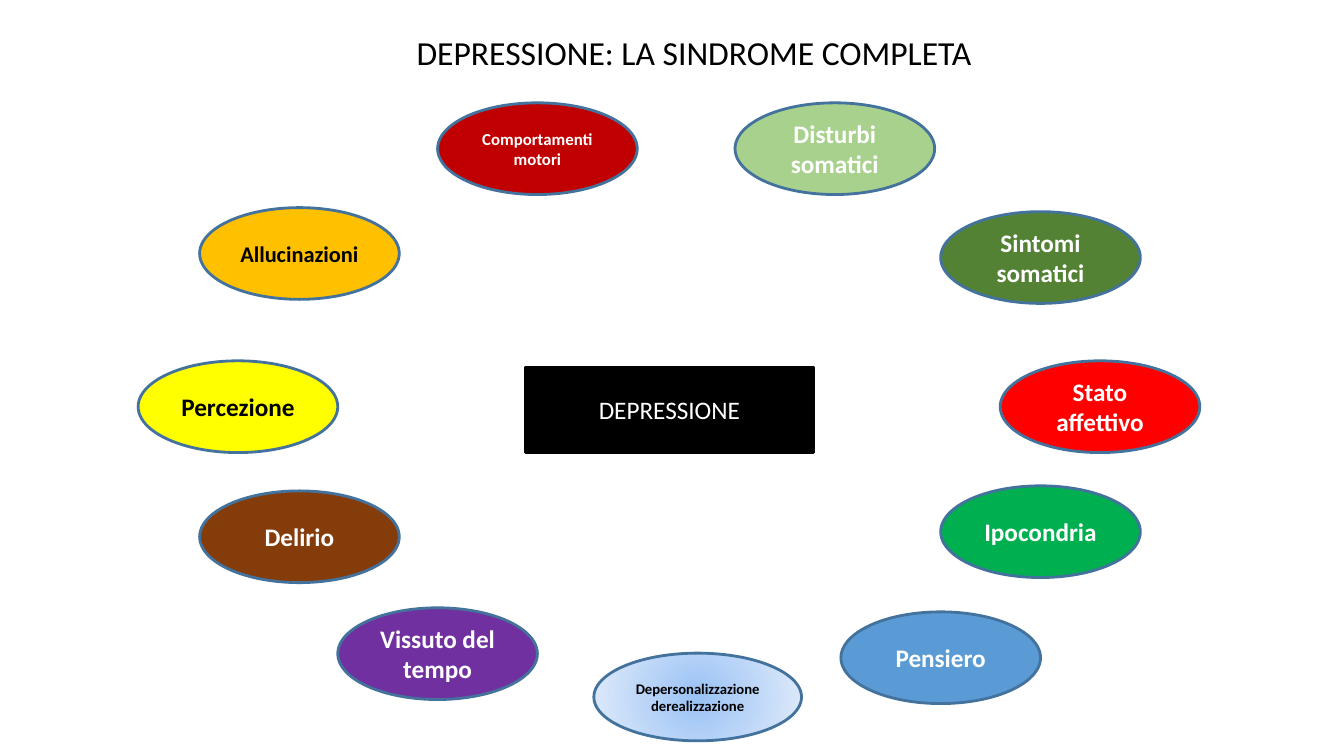
from dataclasses import dataclass

from lxml import etree
from pptx import Presentation
from pptx.dml.color import RGBColor
from pptx.enum.shapes import MSO_SHAPE
from pptx.enum.text import MSO_ANCHOR, MSO_AUTO_SIZE, PP_ALIGN
from pptx.oxml.ns import qn
from pptx.shapes.autoshape import Shape
from pptx.slide import Slide
from pptx.util import Inches, Pt

RECTANGLE = MSO_SHAPE.RECTANGLE
ELLIPSE = MSO_SHAPE.OVAL
CENTER = PP_ALIGN.CENTER
MIDDLE = MSO_ANCHOR.MIDDLE
BOTTOM = MSO_ANCHOR.BOTTOM
NO_AUTOFIT = MSO_AUTO_SIZE.NONE

FONT = "Calibri"
TITLE_ONLY_LAYOUT = 5
BLACK = RGBColor(0x00, 0x00, 0x00)
WHITE = RGBColor(0xFF, 0xFF, 0xFF)
OUTLINE = RGBColor(0x43, 0x72, 0x9D)
RED = RGBColor(0xFF, 0x00, 0x00)
GREEN = RGBColor(0x00, 0xB0, 0x50)
BLUE = RGBColor(0x5B, 0x9B, 0xD5)
PURPLE = RGBColor(0x70, 0x30, 0xA0)
BROWN = RGBColor(0x84, 0x3C, 0x0B)
YELLOW = RGBColor(0xFF, 0xFF, 0x00)
AMBER = RGBColor(0xFF, 0xC0, 0x00)
DARK_RED = RGBColor(0xC0, 0x00, 0x00)
DARK_GREEN = RGBColor(0x54, 0x82, 0x35)
LIGHT_GREEN = RGBColor(0xA9, 0xD1, 0x8E)
GLOW_CENTER = RGBColor(0x9A, 0xC2, 0xF5)
GLOW_EDGE = RGBColor(0xE0, 0xEB, 0xFA)


@dataclass(frozen=True)
class Node:
    text: str
    left: float
    top: float
    fill: RGBColor
    color: RGBColor = WHITE
    size: float = 18
    width: float = 1.98
    height: float = 0.91
    bold: bool = True
    outline: RGBColor = OUTLINE
    kind: MSO_SHAPE = ELLIPSE


CORE = Node("DEPRESSIONE", 5.21, 3.64, BLACK, width=2.86, height=0.85,
            bold=False, outline=BLACK, kind=RECTANGLE)
DEPERSONALIZATION = Node("Depersonalizzazione\nderealizzazione", 5.89, 6.48,
                         GLOW_CENTER, BLACK, 10.5, width=2.06, height=0.87)
SYMPTOMS = [
    Node("Stato affettivo", 9.92, 3.58, RED),
    Node("Ipocondria", 9.33, 4.82, GREEN),
    Node("Pensiero", 8.34, 6.07, BLUE),
    Node("Vissuto del tempo", 3.35, 6.03, PURPLE),
    Node("Delirio", 1.98, 4.87, BROWN),
    Node("Percezione", 1.37, 3.58, YELLOW, BLACK),
    Node("Allucinazioni", 1.98, 2.06, AMBER, BLACK, 16),
    Node("Comportamenti motori", 4.34, 1.02, DARK_RED, size=12),
    Node("Sintomi somatici", 9.33, 2.10, DARK_GREEN),
    Node("Disturbi somatici", 7.29, 1.02, LIGHT_GREEN),
]


def write_text(box: Shape, text: str, size: float, color: RGBColor,
               bold: bool, anchor: MSO_ANCHOR) -> None:
    frame = box.text_frame
    frame.text = text
    frame.word_wrap = True
    frame.vertical_anchor = anchor
    for para in frame.paragraphs:
        para.alignment = CENTER
        for span in para.runs:
            span.font.name = FONT
            span.font.size = Pt(size)
            span.font.bold = bold
            span.font.color.rgb = color


def add_title(page: Slide) -> None:
    title = page.shapes.title
    title.left, title.top = Inches(1.43), Inches(0.23)
    title.width, title.height = Inches(10.91), Inches(0.54)
    write_text(title, "DEPRESSIONE: LA SINDROME COMPLETA", 24, BLACK, False, BOTTOM)
    title.text_frame.auto_size = NO_AUTOFIT
    title.text_frame.paragraphs[0].line_spacing = 0.9


def add_node(page: Slide, node: Node) -> Shape:
    box = page.shapes.add_shape(node.kind, Inches(node.left), Inches(node.top),
                                Inches(node.width), Inches(node.height))
    box.shadow.inherit = False
    box.fill.solid()
    box.fill.fore_color.rgb = node.fill
    box.line.color.rgb = node.outline
    box.line.width = Pt(2)
    write_text(box, node.text, node.size, node.color, node.bold, MIDDLE)
    return box


def apply_glow(box: Shape) -> None:
    box.fill.gradient()
    for stop, color in zip(box.fill.gradient_stops, (GLOW_CENTER, GLOW_EDGE)):
        stop.color.rgb = color
    gradient = box._element.spPr.find(qn("a:gradFill"))
    gradient.remove(gradient.find(qn("a:lin")))
    circle = etree.SubElement(gradient, qn("a:path"), path="circle")
    etree.SubElement(circle, qn("a:fillToRect"),
                     {side: "50000" for side in "ltrb"})


def main() -> None:
    deck = Presentation()
    deck.slide_width, deck.slide_height = Inches(13.33), Inches(7.5)
    page = deck.slides.add_slide(deck.slide_layouts[TITLE_ONLY_LAYOUT])
    add_title(page)
    for node in [CORE, *SYMPTOMS]:
        add_node(page, node)
    apply_glow(add_node(page, DEPERSONALIZATION))
    deck.save("out.pptx")


if __name__ == "__main__":
    main()
